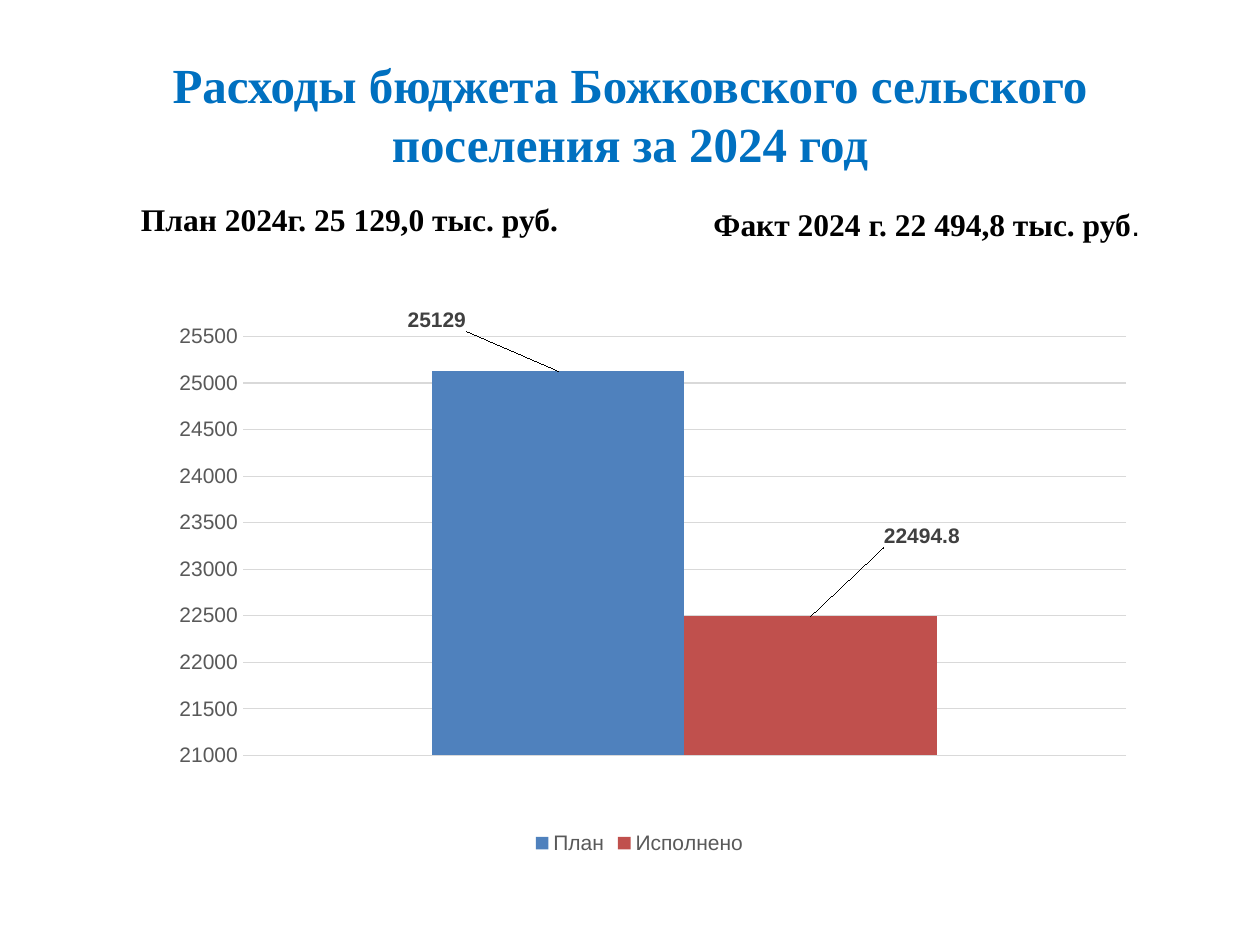
"""Build the slide comparing planned and actual budget spending for 2024."""
from dataclasses import dataclass

import pptx
import pptx.chart.data
import pptx.dml.color
import pptx.enum.chart
import pptx.enum.text
import pptx.oxml
import pptx.oxml.ns
import pptx.util

Inches = pptx.util.Inches
Pt = pptx.util.Pt
RGBColor = pptx.dml.color.RGBColor

BLUE = RGBColor(0x00, 0x70, 0xC0)
BLACK = RGBColor(0x00, 0x00, 0x00)
GREY = RGBColor(0x59, 0x59, 0x59)
DARK = RGBColor(0x40, 0x40, 0x40)
GRID = RGBColor(0xD9, 0xD9, 0xD9)
PLAN = RGBColor(0x4F, 0x81, 0xBD)
ACTUAL = RGBColor(0xC0, 0x50, 0x4D)
SERIF = "Times New Roman"
SANS = "Arial"


@dataclass(frozen=True)
class Heading:
    """A centred bold text with its place, size and colour."""
    text: str
    left: float
    top: float
    width: float
    height: float
    size: int
    color: RGBColor
    anchor: pptx.enum.text.MSO_ANCHOR = pptx.enum.text.MSO_ANCHOR.TOP
    ending: str = ""


@dataclass(frozen=True)
class Spending:
    """A chart series with the offset of its value label."""
    name: str
    value: float
    color: RGBColor
    label_x: float
    label_y: float


HEADINGS = [
    Heading("Расходы бюджета Божковского сельского поселения за 2024 год",
            0.75, 0.47, 8.5, 0.86, 28, BLUE, pptx.enum.text.MSO_ANCHOR.MIDDLE),
    Heading("План 2024г. 25 129,0 тыс. руб.", 0.58, 1.59, 4.39, 0.55, 18, BLACK),
    Heading("Факт 2024 г. 22 494,8 тыс. руб", 5.16, 1.63, 4.39, 0.47, 18, BLACK, ending="."),
]
SPENDINGS = [
    Spending("План", 25129, PLAN, -0.12, -0.06),
    Spending("Исполнено", 22494.8, ACTUAL, 0.11, -0.11),
]


def add_heading(slide, heading: Heading) -> None:
    """Draw one heading, with its ending in the plain sans font."""
    sp = slide.shapes.add_textbox(Inches(heading.left), Inches(heading.top),
                                  Inches(heading.width), Inches(heading.height))
    tf = sp.text_frame
    tf.word_wrap = True
    tf.vertical_anchor = heading.anchor
    tf.margin_left = tf.margin_right = tf.margin_top = tf.margin_bottom = 0
    p = tf.paragraphs[0]
    p.alignment = pptx.enum.text.PP_ALIGN.CENTER
    parts = [(heading.text, SERIF, True), (heading.ending, SANS, False)]
    for text, name, bold in parts:
        if text:
            r = p.add_run()
            r.text = text
            style_font(r.font, heading.size, heading.color, name, bold)


def style_font(font, size: int, color: RGBColor, name: str = SANS, bold: bool = False) -> None:
    """Set size, colour, name and weight of a font."""
    font.size = Pt(size)
    font.name = name
    font.bold = bold
    font.color.rgb = color


def make_layout(**values: object):
    """Return a manual chart layout element."""
    items = "".join(f'<c:{key} val="{value}"/>' for key, value in values.items())
    return pptx.oxml.parse_xml(
        f'<c:layout {pptx.oxml.ns.nsdecls("c")}><c:manualLayout>{items}</c:manualLayout></c:layout>')


def style_series(series, spending: Spending) -> None:
    """Colour a series and shift its value label."""
    series.format.fill.solid()
    series.format.fill.fore_color.rgb = spending.color
    series.invert_if_negative = False
    label = series.points[0].data_label
    style_font(label.font, 12, DARK, bold=True)
    label.position = pptx.enum.chart.XL_LABEL_POSITION.OUTSIDE_END
    idx = series._element.xpath("c:dLbls/c:dLbl/c:idx")[0]
    idx.addnext(make_layout(x=spending.label_x, y=spending.label_y))
    labels = series.data_labels
    labels.show_value = True
    style_font(labels.font, 12, DARK, bold=True)


def add_spending_chart(slide, spendings: list[Spending]) -> None:
    """Draw the clustered column chart."""
    data = pptx.chart.data.CategoryChartData()
    data.categories = ["1"]
    for spending in spendings:
        data.add_series(spending.name, [spending.value])
    chart = slide.shapes.add_chart(
        pptx.enum.chart.XL_CHART_TYPE.COLUMN_CLUSTERED,
        Inches(1.06), Inches(2.19), Inches(8.03), Inches(4.63), data).chart
    style_font(chart.font, 10, BLACK)
    chart.has_title = False
    chart.has_legend = True
    chart.legend.position = pptx.enum.chart.XL_LEGEND_POSITION.BOTTOM
    chart.legend.include_in_layout = False
    style_font(chart.legend.font, 12, GREY)

    chart.category_axis.visible = False
    axis = chart.value_axis
    axis.minimum_scale, axis.maximum_scale, axis.major_unit = 21000, 25500, 500
    axis.major_tick_mark = axis.minor_tick_mark = pptx.enum.chart.XL_TICK_MARK.NONE
    axis.format.line.fill.background()
    axis.major_gridlines.format.line.color.rgb = GRID
    axis.major_gridlines.format.line.width = Pt(0.75)
    style_font(axis.tick_labels.font, 12, GREY)

    plot = chart.plots[0]
    plot.gap_width = 150
    plot.overlap = 0
    plot.vary_by_categories = False
    for series, spending in zip(plot.series, spendings):
        style_series(series, spending)
    area = chart._chartSpace.chart.plotArea
    for layout in area.xpath("c:layout"):
        area.remove(layout)
    area.insert(0, make_layout(layoutTarget="inner", xMode="edge", yMode="edge",
                               x=0.108, y=0.104, w=0.873, h=0.718))


def main() -> None:
    """Build and save the presentation."""
    prs = pptx.Presentation()
    prs.slide_width, prs.slide_height = Inches(10), Inches(7.5)
    slide = prs.slides.add_slide(prs.slide_layouts[6])
    for heading in HEADINGS:
        add_heading(slide, heading)
    add_spending_chart(slide, SPENDINGS)
    prs.save("out.pptx")


if __name__ == "__main__":
    main()
